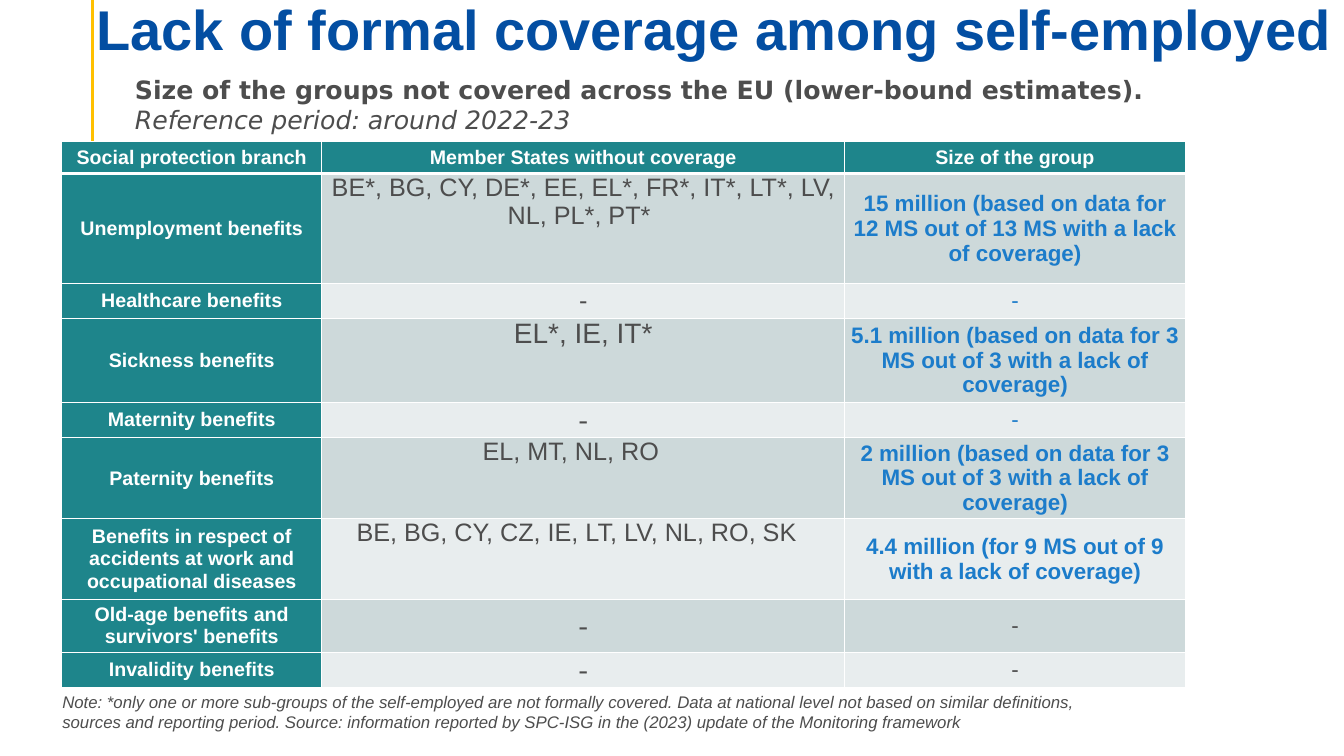
from lxml.etree import SubElement
from pptx import Presentation
from pptx.dml.color import RGBColor
from pptx.enum.shapes import MSO_CONNECTOR
from pptx.enum.text import MSO_ANCHOR, PP_ALIGN
from pptx.oxml import parse_xml
from pptx.oxml.ns import nsdecls, qn
from pptx.util import Cm, Pt

WHITE, GREY, BLUE, TEAL = "FFFFFF", "4D4D4D", "1C7CCA", "1E858B"
BANDS = ["E8EDEE", "CDD9DA"]

HEADER = dict(size=14, bold=True, color=WHITE)
STATES = dict(size=18)
LARGE_STATES = dict(size=20)
DASH = dict(size=20, name="Times New Roman")
SIZE = dict(size=16, bold=True, color=BLUE)
BLUE_DASH = dict(size=16, color=BLUE)
GREY_DASH = dict(size=16)

TITLES = ["Social protection branch", "Member States without coverage", "Size of the group"]
COLUMN_WIDTHS = [6.55, 13.18, 8.58]
HEADER_HEIGHT = 0.81
BRANCHES = [
    (2.77, "Unemployment benefits",
     "BE*, BG, CY, DE*, EE, EL*, FR*, IT*, LT*, LV, NL, PL*, PT* \t", STATES,
     "15 million (based on data for 12 MS out of 13 MS with a lack of coverage)", SIZE),
    (0.88, "Healthcare benefits", "-", STATES, "-", BLUE_DASH),
    (2.12, "Sickness benefits", "EL*, IE, IT*", LARGE_STATES,
     "5.1 million (based on data for 3 MS out of 3 with a lack of coverage)", SIZE),
    (0.89, "Maternity benefits", "-", DASH, "-", BLUE_DASH),
    (2.04, "Paternity benefits", "EL, MT, NL, RO \t", STATES,
     "2 million (based on data for 3 MS out of 3 with a lack of coverage)", SIZE),
    (2.04, "Benefits in respect of accidents at work and occupational diseases",
     "BE, BG, CY, CZ, IE, LT, LV, NL, RO, SK \t", STATES,
     "4.4 million (for 9 MS out of 9 with a lack of coverage)", SIZE),
    (1.33, "Old-age benefits and survivors' benefits", "-", DASH, "-", GREY_DASH),
    (0.89, "Invalidity benefits", "-", DASH, "-", GREY_DASH),
]


def rgb(value):
    return RGBColor.from_string(value)


def add_span(para, text, size, color=GREY, name="Arial", bold=False, italic=False):
    span = para.add_run()
    span.text = text
    formats = {"size": Pt(size), "name": name, "bold": bold, "italic": italic}
    for key, value in formats.items():
        setattr(span.font, key, value)
    span.font.color.rgb = rgb(color)


def add_text(page, box, spans, anchor=MSO_ANCHOR.TOP, line_spacing=1.0, bottom=0.13):
    frame = page.shapes.add_textbox(*map(Cm, box)).text_frame
    formats = {"word_wrap": True, "vertical_anchor": anchor, "margin_bottom": Cm(bottom)}
    for key, value in formats.items():
        setattr(frame, key, value)
    para = frame.paragraphs[0]
    para.line_spacing = line_spacing
    for text, style in spans:
        add_span(para, text, **style)


def add_heading(page, box):
    left, top, width, height = box
    line = page.shapes.add_connector(
        MSO_CONNECTOR.STRAIGHT, Cm(left + 0.15), Cm(0), Cm(left + 0.15), Cm(top + height))
    line.line.color.rgb = rgb("FFC000")
    line.line.width = Pt(2.25)
    SubElement(line._element.spPr, qn("a:effectLst"))
    add_text(page, (left, top, width, 2.18),
             [("Lack of formal coverage among self-employed",
               dict(size=40, bold=True, color="034EA2"))],
             MSO_ANCHOR.BOTTOM, 0.9, 0)
    subtitle = dict(size=18, name="DejaVu Sans")
    add_text(page, (left + 0.97, top + 2.36, 27.31, 1.8),
             [("Size of the groups not covered across the EU (lower-bound estimates). ",
               dict(subtitle, bold=True)),
              ("Reference period: around 2022-23", dict(subtitle, italic=True))])


def set_borders(cell, row_number):
    widths = {"L": 1, "R": 1, "T": 3 if row_number == 1 else 1, "B": 3 if row_number == 0 else 1}
    properties = cell._tc.get_or_add_tcPr()
    for position, (side, width) in enumerate(widths.items()):
        properties.insert(position, parse_xml(
            f'<a:ln{side} {nsdecls("a")} w="{Pt(width)}"><a:solidFill>'
            f'<a:srgbClr val="{WHITE}"/></a:solidFill></a:ln{side}>'))


def fill_cell(cell, row_number, text, style, color, anchor=MSO_ANCHOR.MIDDLE):
    formats = {"margin_left": Cm(0.16), "margin_right": Cm(0.16), "margin_top": 0,
               "margin_bottom": 0, "vertical_anchor": anchor}
    for key, value in formats.items():
        setattr(cell, key, value)
    cell.fill.solid()
    cell.fill.fore_color.rgb = rgb(color)
    set_borders(cell, row_number)
    para = cell.text_frame.paragraphs[0]
    para.alignment = PP_ALIGN.CENTER
    add_span(para, text, **style)


def add_coverage_table(page, box):
    table = page.shapes.add_table(len(BRANCHES) + 1, len(TITLES), *map(Cm, box)).table
    table.first_row = table.horz_banding = False
    for column, width in zip(table.columns, COLUMN_WIDTHS):
        column.width = Cm(width)
    table.rows[0].height = Cm(HEADER_HEIGHT)
    for number, title in enumerate(TITLES):
        fill_cell(table.cell(0, number), 0, title, HEADER, TEAL)
    for number, branch in enumerate(BRANCHES, 1):
        height, name, states, states_style, size, size_style = branch
        table.rows[number].height = Cm(height)
        band = BANDS[number % 2]
        anchor = MSO_ANCHOR.MIDDLE if states == "-" else MSO_ANCHOR.TOP
        fill_cell(table.cell(number, 0), number, name, HEADER, TEAL)
        fill_cell(table.cell(number, 1), number, states, states_style, band, anchor)
        fill_cell(table.cell(number, 2), number, size, size_style, band)


def add_note(page, box):
    add_text(page, box, [(
        "Note: *only one or more sub-groups of the self-employed are not formally covered. "
        "Data at national level not based on similar definitions, sources and reporting "
        "period. Source: information reported by SPC-ISG in the (2023) update of the "
        "Monitoring framework", dict(size=12, italic=True))])


def main():
    deck = Presentation()
    deck.slide_width, deck.slide_height = Cm(33.87), Cm(19.05)
    page = deck.slides.add_slide(deck.slide_layouts[6])
    add_heading(page, (2.18, -0.61, 31.83, 4.17))
    add_coverage_table(page, (1.56, 3.56, sum(COLUMN_WIDTHS), 13.77))
    add_note(page, (1.32, 17.3, 26.92, 1.27))
    deck.save("out.pptx")


if __name__ == "__main__":
    main()
